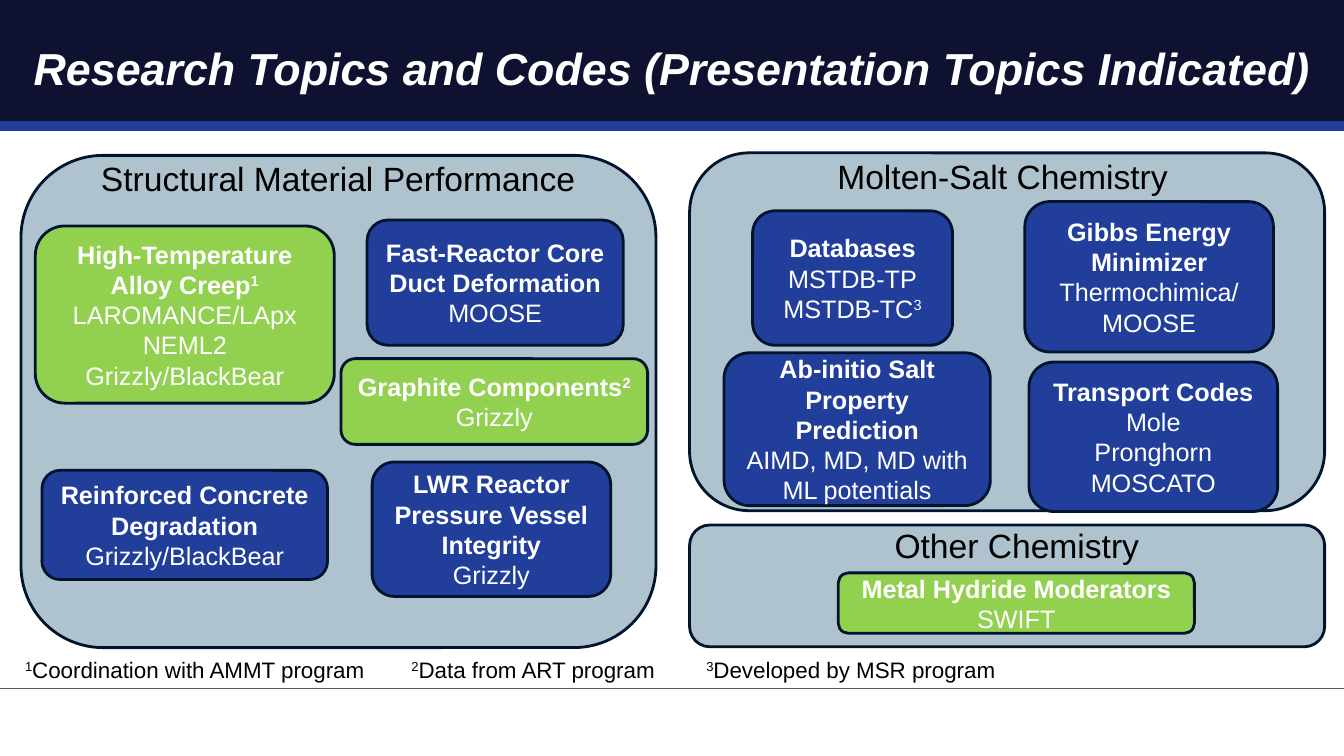
"""Build the research topics and codes slide on a 16 by 9 grid."""
import pptx
import pptx.dml.color
import pptx.enum.shapes
import pptx.enum.text
import pptx.util
import lxml.etree

NAVY, BLUE, GREEN, GREY = "0E1130", "213E9A", "92D050", "AEC3CE"
EDGE, WHITE, BLACK, RULE = "00152D", "FFFFFF", "000000", "595959"
KIND = pptx.enum.shapes.MSO_SHAPE
ALIGN = pptx.enum.text.PP_ALIGN
MID = pptx.enum.text.MSO_ANCHOR.MIDDLE

deck = pptx.Presentation()
deck.slide_width = pptx.util.Inches(13.333)
deck.slide_height = pptx.util.Inches(7.5)
col, row = deck.slide_width / 16, deck.slide_height / 9
slide = deck.slides.add_slide(deck.slide_layouts[5])
shapes = slide.shapes


def hue(code):
    return pptx.dml.color.RGBColor.from_string(code)


def write(para, text, size, tint, bold=False):
    for turn, part in enumerate(text.split("^")):
        if part:
            run = para.add_run()
            run.text = part
            run.font.name = "Arial"
            run.font.size = pptx.util.Pt(size)
            run.font.bold = bold
            run.font.color.rgb = hue(tint)
            if turn % 2:
                run.font._element.set("baseline", "30000")


band = shapes.add_shape(KIND.RECTANGLE, int(-0.04 * col), 0, int(16.08 * col), int(1.5 * row))
band.shadow.inherit = False
band.fill.solid()
band.fill.fore_color.rgb = hue(NAVY)
band.line.fill.background()

for y, tint, width in [(1.5, BLUE, 6.75), (8.2, RULE, 1)]:
    rule = shapes.add_connector(
        pptx.enum.shapes.MSO_CONNECTOR.STRAIGHT,
        int(-0.04 * col), int(y * row), int(16.04 * col), int(y * row))
    rule.line.color.rgb = hue(tint)
    rule.line.width = pptx.util.Pt(width)
    lxml.etree.SubElement(rule.element.spPr, pptx.oxml.ns.qn("a:effectLst"))

title = shapes.title
shapes.element.append(title.element)
title.left, title.top = int(0.4 * col), int(0.4 * row)
title.width, title.height = int(15.34 * col), int(0.9 * row)
frame = title.text_frame
frame.margin_left = frame.margin_right = frame.margin_top = frame.margin_bottom = 0
frame.vertical_anchor = MID
frame.word_wrap = True
head = frame.paragraphs[0]
head.alignment = ALIGN.LEFT
head.line_spacing = 0.9
write(head, "Research Topics and Codes (Presentation Topics Indicated)", 32, WHITE, True)
head.runs[0].font.italic = True

panels = [(0.25, 1.85, 7.56, 5.86), (8.21, 1.82, 7.56, 4.26), (8.21, 6.25, 7.56, 1.45)]
topics = [
    (0.42, 2.69, 3.56, 2.11, GREEN, "High-Temperature Alloy Creep^1",
     ["LAROMANCE/LApx", "NEML2", "Grizzly/BlackBear"]),
    (0.5, 5.6, 3.4, 1.3, BLUE, "Reinforced Concrete Degradation", ["Grizzly/BlackBear"]),
    (4.06, 4.27, 3.65, 1.02, GREEN, "Graphite Components^2", ["Grizzly"]),
    (4.37, 2.62, 3.05, 1.49, "203E9A", "Fast-Reactor Core Duct Deformation", ["MOOSE"]),
    (8.96, 2.51, 2.38, 1.6, BLUE, "Databases", ["MSTDB-TP", "MSTDB-TC^3"]),
    (12.2, 2.4, 2.96, 1.79, BLUE, "Gibbs Energy Minimizer", ["Thermochimica/", "MOOSE"]),
    (12.25, 4.31, 2.96, 1.78, BLUE, "Transport Codes", ["Mole", "Pronghorn", "MOSCATO"]),
    (8.62, 4.2, 3.17, 1.82, BLUE, "Ab-initio Salt Property Prediction",
     ["AIMD, MD, MD with ML potentials"]),
    (4.43, 5.5, 2.84, 1.6, BLUE, "LWR Reactor Pressure Vessel Integrity", ["Grizzly"]),
    (9.98, 6.82, 4.24, 0.72, GREEN, "Metal Hydride Moderators", ["SWIFT"]),
]
plain = [(*spot, GREY, "", []) for spot in panels]
for x, y, wide, high, tint, name, codes in plain + topics:
    box = shapes.add_shape(KIND.ROUNDED_RECTANGLE, int(x * col), int(y * row),
                           int(wide * col), int(high * row))
    box.shadow.inherit = False
    box.fill.solid()
    box.fill.fore_color.rgb = hue(tint)
    box.line.color.rgb = hue(EDGE)
    box.line.width = pptx.util.Pt(2)
    frame = box.text_frame
    frame.word_wrap = True
    frame.vertical_anchor = MID
    for rank, line in enumerate([name] + codes):
        para = frame.add_paragraph() if rank else frame.paragraphs[0]
        para.alignment = ALIGN.CENTER
        write(para, line, 18, WHITE, rank == 0)

labels = [
    (1, 1.82, 6.05, 0.6, 24, "Structural Material Performance"),
    (8.87, 1.8, 6.13, 0.6, 24, "Molten-Salt Chemistry"),
    (9.04, 6.19, 6.13, 0.6, 24, "Other Chemistry"),
    (0.18, 7.75, 4.48, 0.44, 16, "^1^Coordination with AMMT program"),
    (4.78, 7.75, 3.32, 0.44, 16, "^2^Data from ART program"),
    (8.29, 7.75, 3.82, 0.44, 16, "^3^Developed by MSR program"),
]
for x, y, wide, high, size, text in labels:
    label = shapes.add_textbox(int(x * col), int(y * row), int(wide * col), int(high * row))
    frame = label.text_frame
    frame.word_wrap = size == 24
    para = frame.paragraphs[0]
    para.alignment = ALIGN.CENTER if size == 24 else ALIGN.LEFT
    write(para, text, size, BLACK)

deck.save("out.pptx")
